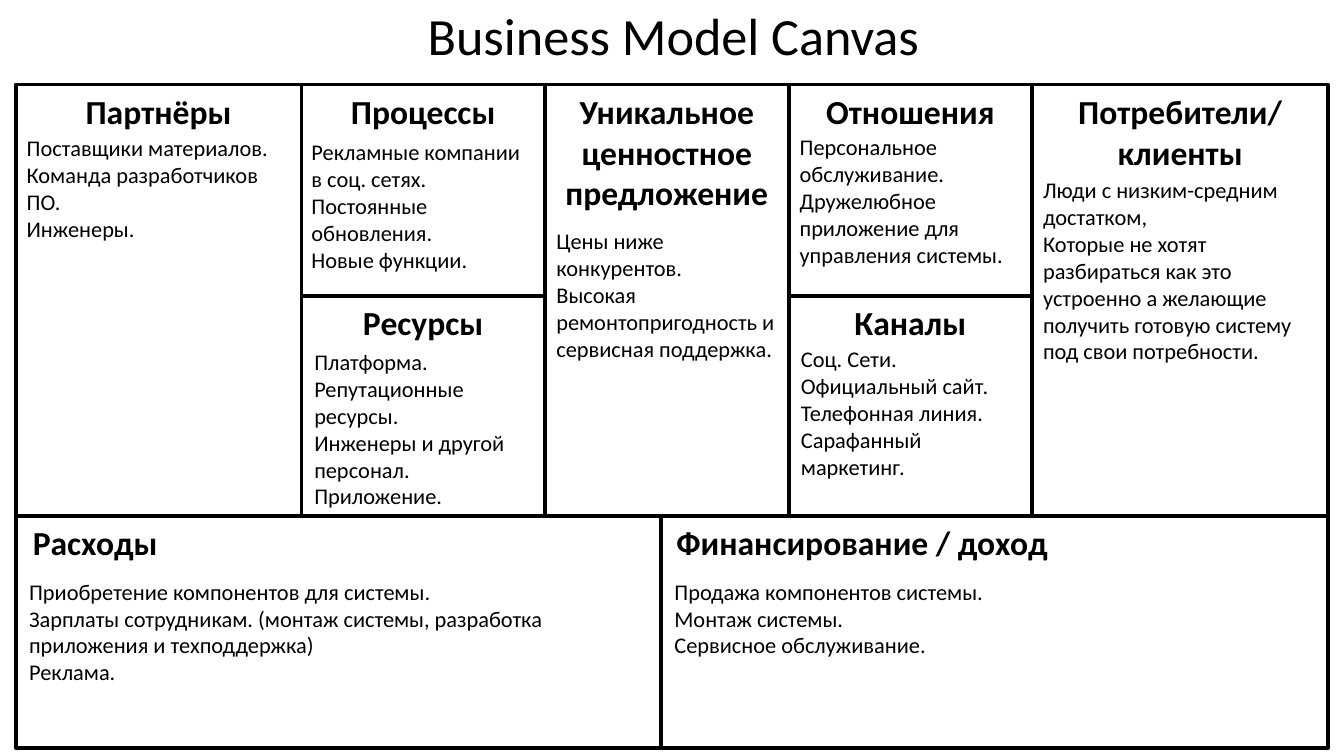
"""Build a one-slide Business Model Canvas in Russian."""
from dataclasses import dataclass

from pptx import Presentation
from pptx import util as u
from pptx.dml import color
from pptx.enum import shapes, text


@dataclass(frozen=True)
class Theme:
    ink: color.RGBColor = color.RGBColor(0, 0, 0)
    font: str = "Calibri"
    title: int = 28
    heading: int = 18
    body: int = 12
    border: int = 2


theme = Theme()
deck = Presentation()
deck.slide_width, deck.slide_height = u.Pt(720), u.Pt(405)
slide = deck.slides.add_slide(deck.slide_layouts[6])


def add_text(lines, left, top, width, height, size, bold=False, centred=True):
    box = slide.shapes.add_textbox(u.Pt(left), u.Pt(top), u.Pt(width), u.Pt(height))
    frame = box.text_frame
    frame.word_wrap = True
    frame.auto_size = text.MSO_AUTO_SIZE.SHAPE_TO_FIT_TEXT
    frame.text = "\n".join(lines)
    for paragraph in frame.paragraphs:
        paragraph.alignment = text.PP_ALIGN.CENTER if centred else text.PP_ALIGN.LEFT
        for run in paragraph.runs:
            run.font.name = theme.font
            run.font.size = u.Pt(size)
            run.font.bold = bold
            run.font.color.rgb = theme.ink


add_text(["Business Model Canvas"], 0.7, -2, 720, 40, theme.title)

x0, x1, x2, x3, x4, x5 = 8.5, 161.5, 292, 422.5, 553, 711.5
top, middle, lower, bottom = 45.3, 158.4, 276.3, 400.7
split = 354.2

# cell edges, heading lines, heading width and height, body left, top and height, body lines
blocks = [
    ((x0, top, x1, lower), ["Партнёры"], 153, 29, (7.2, 68.5, 65),
     ["Поставщики материалов.", "Команда разработчиков ПО.", "Инженеры."]),
    ((x2, top, x3, lower), ["Уникальное ценностное предложение"], 130.5, 72, (291, 118.3, 94),
     ["Цены ниже конкурентов.", "Высокая ремонтопригодность и сервисная поддержка."]),
    ((x4, top, x5, lower), ["Потребители/", "клиенты"], 158.5, 50, (551.7, 90.9, 108),
     ["Люди с низким-средним достатком,",
      "Которые не хотят разбираться как это устроенно а желающие получить "
      "готовую систему под свои потребности."]),
    ((x0, lower, split, bottom), ["Расходы"], 85, 29, (8.5, 306, 94),
     ["Приобретение компонентов для системы.",
      "Зарплаты сотрудникам. (монтаж системы, разработка приложения и техподдержка)",
      "Реклама."]),
    ((split, lower, x5, bottom), ["Финансирование / доход"], 215.5, 29, (354.2, 306, 65),
     ["Продажа компонентов системы.", "Монтаж системы.", "Сервисное обслуживание."]),
    ((x3, top, x4, middle), ["Отношения"], 130.5, 29, (421.3, 67.9, 79),
     ["Персональное обслуживание.", "Дружелюбное приложение для управления системы."]),
    ((x3, middle, x4, lower), ["Каналы"], 130.5, 29, (422, 181.4, 79),
     ["Соц. Сети.", "Официальный сайт.", "Телефонная линия.", "Сарафанный маркетинг."]),
    ((x1, top, x2, middle), ["Процессы"], 130.5, 29, (159.8, 70.6, 79),
     ["Рекламные компании в соц. сетях.", "Постоянные обновления.", "Новые функции."]),
    ((x1, middle, x2, lower), ["Ресурсы"], 130.5, 29, (161.3, 183, 94),
     ["Платформа.", "Репутационные ресурсы.", "Инженеры и другой персонал.", "Приложение."]),
]

for (left, upper, right, base), *_ in blocks:
    cell = slide.shapes.add_shape(
        shapes.MSO_SHAPE.RECTANGLE, u.Pt(left), u.Pt(upper), u.Pt(right - left), u.Pt(base - upper))
    cell.shadow.inherit = False
    cell.fill.background()
    cell.line.color.rgb = theme.ink
    cell.line.width = u.Pt(theme.border)

for (left, upper, right, base), heading, width, height, place, details in blocks:
    body_left, body_top, body_height = place
    add_text(heading, left, upper, width, height, theme.heading, bold=True)
    add_text(details, body_left, body_top, right - left + 0.7, body_height, theme.body, centred=False)

deck.save("out.pptx")
